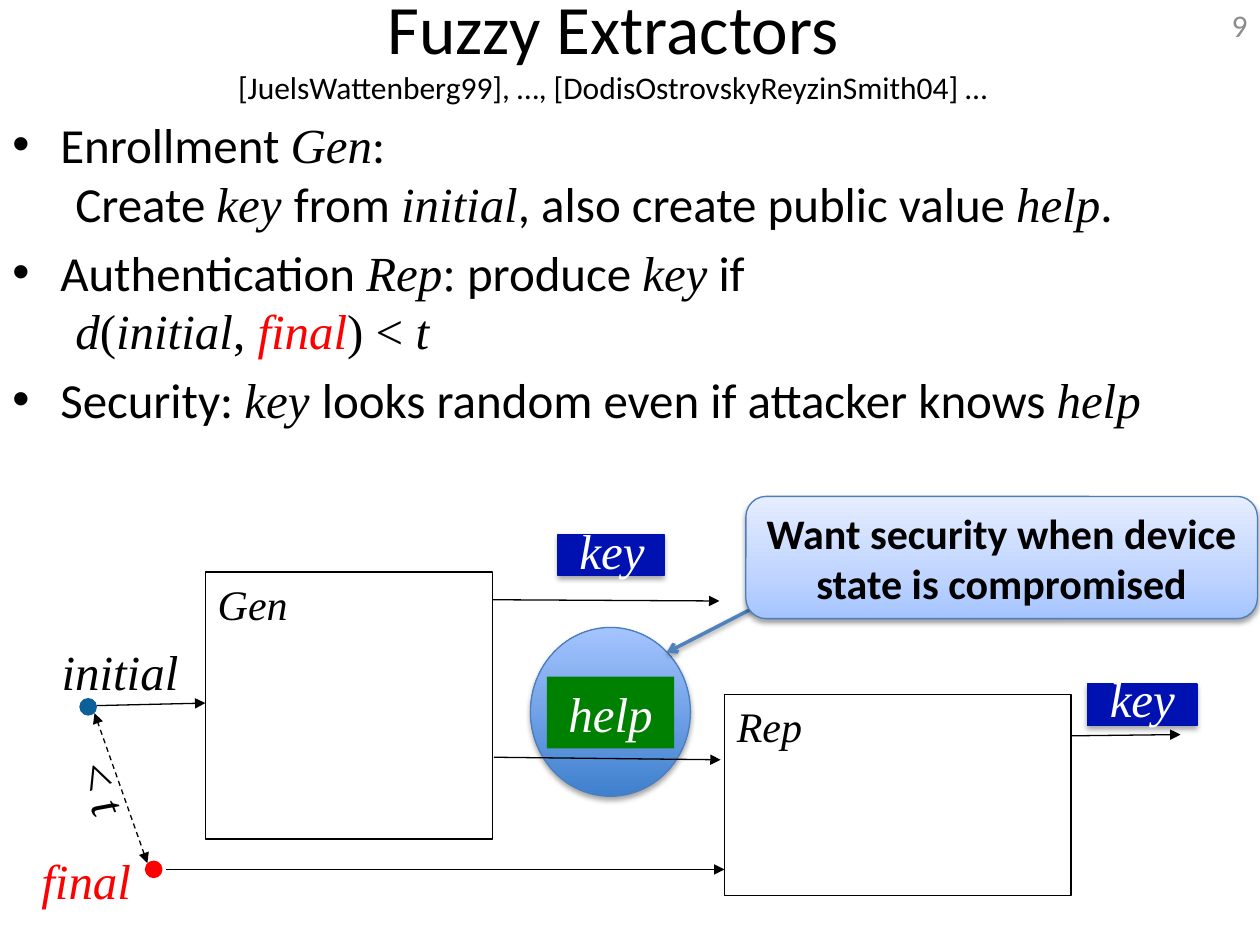
"""Build the Fuzzy Extractors slide with its Gen and Rep diagram."""
from copy import deepcopy

from lxml import etree
from pptx import Presentation
from pptx import util as u
from pptx.dml.color import RGBColor
from pptx.enum import dml, shapes, text
from pptx.oxml.ns import qn

THEME = {
    "black": "000000", "white": "FFFFFF", "red": "FF0000", "grey": "8C8C8C",
    "green": "008000", "key": "0011B2", "initial": "0B609A",
    "edge": "4B7EBC", "pointer": "4F81BD",
    "circle": [(0, "3F80CE"), (100, "A4C4FF")],
    "callout": [(0, "A4C4FF"), (35, "BFD4FF"), (100, "E6EEFF")],
    "title_size": 39.6, "body_size": 28, "box_size": 24, "small_size": 18,
}
STYLES = {
    "sans": {"name": "Calibri", "italic": False},
    "bold": {"name": "Calibri", "bold": True},
    "math": {"name": "Times New Roman", "italic": False},
    "var": {"name": "Times New Roman", "italic": True},
}


def write(paragraph, runs, size="body_size", color="black"):
    for wording, style, *own_color in runs:
        for i, piece in enumerate(wording.split("\n")):
            if i:
                paragraph.add_line_break()
                paragraph._p[-1].append(deepcopy(run._r.rPr))
            run = paragraph.add_run()
            run.text = piece
            for name, value in {"size": u.Pt(THEME[size]), **STYLES[style]}.items():
                setattr(run.font, name, value)
            run.font.color.rgb = RGBColor.from_string(THEME[(own_color or [color])[0]])


def set_shadow(item, alpha=0, distance=0):
    properties = item._element.spPr
    effects = properties.find(qn("a:effectLst"))
    if effects is None:
        effects = etree.SubElement(properties, qn("a:effectLst"))
    if alpha:
        outer = etree.SubElement(effects, qn("a:outerShdw"), blurRad=str(u.Pt(3.1)),
                                 dist=str(u.Pt(distance)), dir="5400000", rotWithShape="0")
        tint = etree.SubElement(outer, qn("a:srgbClr"), val=THEME["black"])
        etree.SubElement(tint, qn("a:alpha"), val=str(alpha * 1000))


prs = Presentation()
prs.slide_width, prs.slide_height = u.Inches(10), u.Inches(7.5)
slide = prs.slides.add_slide(prs.slide_layouts[5])

title = slide.shapes.title
for side, value in zip(("left", "top", "width", "height"), (-0.54, -0.11, 10.81, 0.94)):
    setattr(title, side, u.Inches(value))
title.text_frame.auto_size = text.MSO_AUTO_SIZE.NONE
title.text_frame.vertical_anchor = text.MSO_ANCHOR.MIDDLE
heading = title.text_frame.paragraphs[0]
heading.alignment = text.PP_ALIGN.CENTER
write(heading, [("Fuzzy Extractors\n", "sans")], "title_size")
write(heading, [("[JuelsWattenberg99], …, [DodisOstrovskyReyzinSmith04] …", "sans")], "small_size")

points = [
    [("Enrollment ", "sans"), ("Gen", "var"), (": \n\tCreate ", "sans"), ("key ", "var"),
     ("from ", "sans"), ("initial", "var"), (", also create public value ", "sans"),
     ("help", "var"), (".", "sans")],
    [("Authentication ", "sans"), ("Rep", "var"), (":", "math"), (" produce ", "sans"),
     ("key", "var"), (" if \n\t", "sans"), ("d", "var"), ("(", "math"), ("initial", "var"),
     (", ", "math"), ("final", "var", "red"), (") < ", "math"), ("t", "var")],
    [("Security: ", "sans"), ("key ", "var"),
     ("looks random even if attacker knows ", "sans"), ("help", "var")],
]
body = slide.shapes.add_textbox(*map(u.Inches, (0, 0.86, 10.39, 3.12))).text_frame
body.word_wrap = True
for i, runs in enumerate(points):
    point = body.add_paragraph() if i else body.paragraphs[0]
    point.space_before = u.Pt(5.6)
    layout = point._p.get_or_add_pPr()
    layout.set("marL", str(u.Inches(0.38)))
    layout.set("indent", str(u.Inches(-0.38)))
    etree.SubElement(layout, qn("a:buFont"), typeface="Arial")
    etree.SubElement(layout, qn("a:buChar"), char="•")
    stops = etree.SubElement(layout, qn("a:tabLst"))
    for stop in (0.12, 0.5):
        etree.SubElement(stops, qn("a:tab"), pos=str(u.Inches(stop)), algn="l")
    write(point, runs)

arrows = [
    ((5.99, 4.82, 5.29, 5.18), {"color": "pointer", "width": 2, "tail": "arrow", "shadow": (38, 1.6)}),
    ((0.77, 5.6, 1.63, 5.58), {}),
    ((3.91, 4.76, 5.71, 4.77), {}),
    ((3.92, 6.01, 5.72, 6.03), {}),
    ((1.32, 6.9, 5.75, 6.9), {}),
    ((8.51, 5.84, 9.37, 5.83), {}),
    ((1.17, 6.85, 0.75, 5.66), {"head": "triangle", "dash": dml.MSO_LINE.DASH}),
]
kinds = shapes.MSO_SHAPE
circle = (kinds.OVAL, (4.21, 4.98, 1.27, 1.34),
          {"gradient": "circle", "line": "edge", "shadow": (35, 1.8)})
parts = [
    (kinds.RECTANGLE, (4.34, 5.37, 1.01, 0.57),
     {"fill": "green", "label": ("help", "var"), "color": "white"}),
    (kinds.OVAL, (0.63, 5.54, 0.14, 0.14), {"fill": "initial"}),
    (kinds.RECTANGLE, (1.63, 4.54, 2.28, 2.12), {"line": "black"}),
    (kinds.RECTANGLE, (5.75, 5.51, 2.75, 1.6), {"line": "black"}),
    (kinds.RECTANGLE, (4.43, 4.24, 0.84, 0.33), {"fill": "key", "line": "key", "shadow": (35, 1.8)}),
    (kinds.RECTANGLE, (8.63, 5.43, 0.87, 0.33), {"fill": "key", "line": "key", "shadow": (35, 1.8)}),
    (kinds.ROUNDED_RECTANGLE, (5.92, 3.94, 4.06, 0.97),
     {"gradient": "callout", "line": "edge", "shadow": (38, 1.6), "size": "box_size",
      "label": ("Want security when device state is compromised", "bold")}),
    (kinds.OVAL, (1.15, 6.83, 0.14, 0.14), {"fill": "red"}),
]
for kind, place, look in [circle, *((None, *arrow) for arrow in arrows), *parts]:
    if kind is None:
        part = slide.shapes.add_connector(shapes.MSO_CONNECTOR.STRAIGHT, *map(u.Inches, place))
        part.line.dash_style = look.get("dash")
    else:
        part = slide.shapes.add_shape(kind, *map(u.Inches, place))
        part.shadow.inherit = False
        if "gradient" in look:
            part.fill.gradient()
            part.fill.gradient_angle = 90
            gradient = part._element.spPr.find(".//" + qn("a:gsLst"))
            gradient.clear()
            for position, shade in THEME[look["gradient"]]:
                stop = etree.SubElement(gradient, qn("a:gs"), pos=str(position * 1000))
                etree.SubElement(stop, qn("a:srgbClr"), val=shade)
        elif "fill" in look:
            part.fill.solid()
            part.fill.fore_color.rgb = RGBColor.from_string(THEME[look["fill"]])
        else:
            part.fill.background()
    if kind is None or "line" in look:
        part.line.color.rgb = RGBColor.from_string(THEME[look.get("line", look.get("color", "black"))])
        part.line.width = u.Pt(look.get("width", 0.75))
    else:
        part.line.fill.background()
    if kind is None:
        ends = {"headEnd": look.get("head", "none"), "tailEnd": look.get("tail", "triangle")}
        for end, tip in ends.items():
            etree.SubElement(part.line._get_or_add_ln(), qn("a:" + end), type=tip)
    set_shadow(part, *look.get("shadow", ()))
    if "label" in look:
        frame = part.text_frame
        frame.word_wrap = True
        frame.vertical_anchor = text.MSO_ANCHOR.MIDDLE
        for margin in ("left", "top", "right", "bottom"):
            setattr(frame, "margin_" + margin, u.Inches(0.05))
        frame.paragraphs[0].alignment = text.PP_ALIGN.CENTER
        write(frame.paragraphs[0], [look["label"]], look.get("size", "body_size"), look.get("color", "black"))

labels = [
    ((0.39, 5.04, 1.18, 0.57), [("initial", "var")], {}),
    ((0.51, 5.98, 0.65, 0.57), [("< ", "math"), ("t", "var")], {"rotation": 69.7}),
    ((1.63, 4.54, 0.87, 0.5), [("Gen", "var")], {"size": "box_size"}),
    ((5.75, 5.51, 0.84, 0.5), [("Rep", "var")], {"size": "box_size"}),
    ((4.5, 4.08, 0.78, 0.57), [("key", "var")], {"color": "white"}),
    ((8.71, 5.26, 0.86, 0.57), [("key", "var")], {"color": "white"}),
    ((7.67, 0, 2.33, 0.4), [("9", "sans")],
     {"size": "small_size", "color": "grey", "align": text.PP_ALIGN.RIGHT}),
    ((0.23, 6.7, 1.02, 0.57), [("final", "var")], {"color": "red"}),
]
for place, runs, look in labels:
    label = slide.shapes.add_textbox(*map(u.Inches, place))
    label.rotation = look.get("rotation", 0)
    label.text_frame.word_wrap = True
    label.text_frame.paragraphs[0].alignment = look.get("align", text.PP_ALIGN.LEFT)
    write(label.text_frame.paragraphs[0], runs, look.get("size", "body_size"), look.get("color", "black"))

prs.save("out.pptx")
